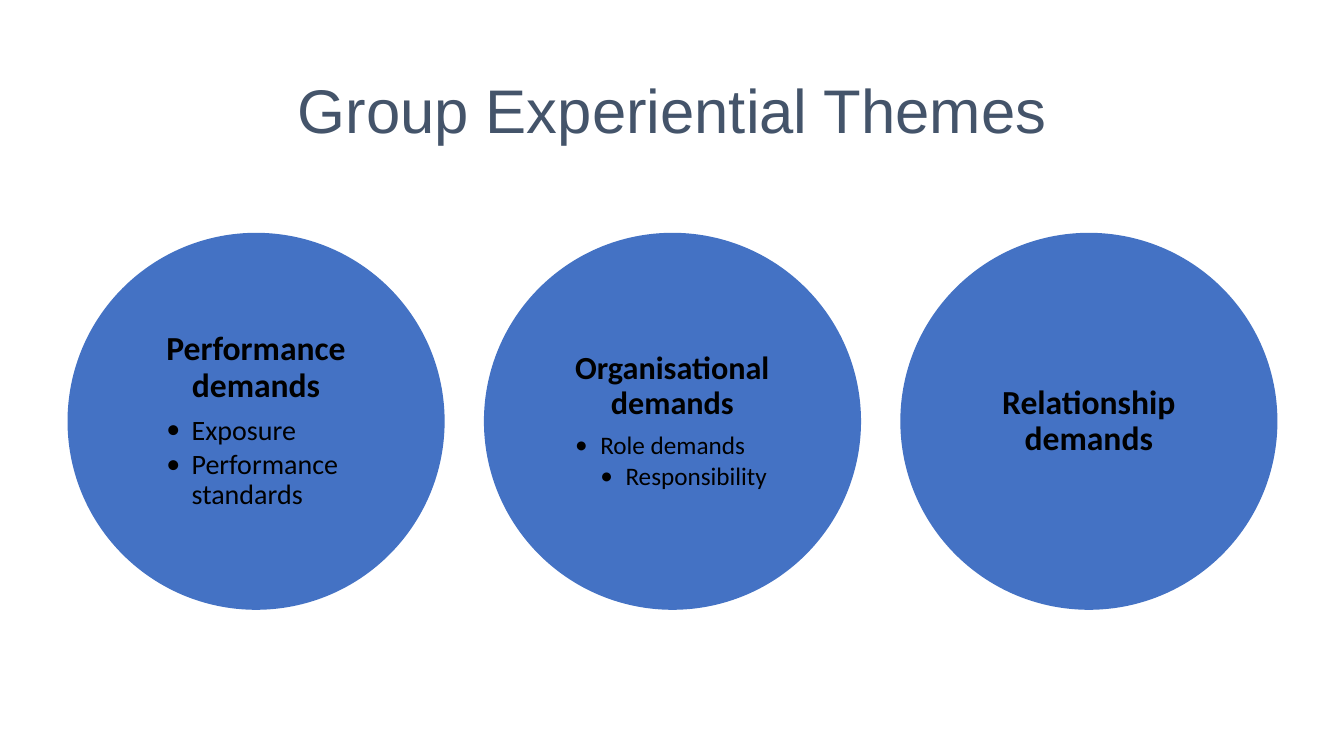
"""Build the Group Experiential Themes slide with three theme circles."""
import pptx
import pptx.dml.color
import pptx.enum.shapes
import pptx.enum.text
import pptx.util
from lxml import etree
from pptx.oxml.ns import qn

Inches = pptx.util.Inches
Pt = pptx.util.Pt
RGBColor = pptx.dml.color.RGBColor
Align = pptx.enum.text.PP_ALIGN
Anchor = pptx.enum.text.MSO_ANCHOR

TITLE = "Group Experiential Themes"
THEMES = [
    {"heading": "Performance demands", "heading_size": 24, "item_size": 20,
     "items": [(1, "Exposure"), (1, "Performance standards")]},
    {"heading": "Organisational demands", "heading_size": 23, "item_size": 18,
     "items": [(1, "Role demands"), (2, "Responsibility")]},
    {"heading": "Relationship demands", "heading_size": 24, "item_size": 20,
     "items": []},
]

SLATE = RGBColor(0x44, 0x54, 0x6A)
BLUE = RGBColor(0x44, 0x72, 0xC4)
BLACK = RGBColor(0, 0, 0)

CIRCLE_LEFT, CIRCLE_TOP = 0.67, 2.31
DIAMETER, PITCH = 3.74, 4.13
INSET_X, INSET_Y = 0.34, 0.14
INDENT = 0.25


def format_paragraph(paragraph, font_name, size, color, bold=False):
    paragraph.line_spacing = 0.9
    for run in paragraph.runs:
        run.font.name = font_name
        run.font.size = Pt(size)
        run.font.bold = bold
        run.font.color.rgb = color


def add_bullet(paragraph, level):
    paragraph.level = level
    properties = paragraph._p.get_or_add_pPr()
    properties.set("marL", str(Inches(INDENT * level)))
    properties.set("indent", str(Inches(-INDENT)))
    etree.SubElement(properties, qn("a:buFont")).set("typeface", "Calibri")
    etree.SubElement(properties, qn("a:buChar")).set("char", "•")


def add_theme(slide, index, theme):
    circle = slide.shapes.add_shape(
        pptx.enum.shapes.MSO_SHAPE.OVAL,
        Inches(CIRCLE_LEFT + index * PITCH), Inches(CIRCLE_TOP),
        Inches(DIAMETER), Inches(DIAMETER))
    circle.shadow.inherit = False
    circle.fill.solid()
    circle.fill.fore_color.rgb = BLUE
    circle.line.fill.background()

    frame = circle.text_frame
    frame.word_wrap = True
    frame.vertical_anchor = Anchor.MIDDLE
    frame.margin_left = frame.margin_right = Inches(INSET_X)
    frame.margin_top = frame.margin_bottom = Inches(INSET_Y)
    frame._txBody.bodyPr.set("anchorCtr", "1")

    frame.text = theme["heading"]
    heading = frame.paragraphs[0]
    heading.alignment = Align.CENTER
    heading.space_after = Pt(0.35 * theme["heading_size"])
    format_paragraph(heading, "Calibri", theme["heading_size"], BLACK, bold=True)

    for level, text in theme["items"]:
        item = frame.add_paragraph()
        item.text = text
        add_bullet(item, level)
        item.alignment = Align.LEFT
        item.space_after = Pt(0.15 * theme["item_size"])
        format_paragraph(item, "Calibri", theme["item_size"], BLACK)


def main():
    presentation = pptx.Presentation()
    presentation.slide_width = Inches(13.33)
    presentation.slide_height = Inches(7.5)
    slide = presentation.slides.add_slide(presentation.slide_layouts[5])

    title = slide.shapes.title
    title.left, title.top = Inches(0.92), Inches(0.4)
    title.width, title.height = Inches(11.5), Inches(1.45)
    title.text_frame.text = TITLE
    title.text_frame.vertical_anchor = Anchor.MIDDLE
    title.text_frame.paragraphs[0].alignment = Align.CENTER
    format_paragraph(title.text_frame.paragraphs[0], "Arial", 44, SLATE)

    for index, theme in enumerate(THEMES):
        add_theme(slide, index, theme)

    presentation.save("out.pptx")


if __name__ == "__main__":
    main()
